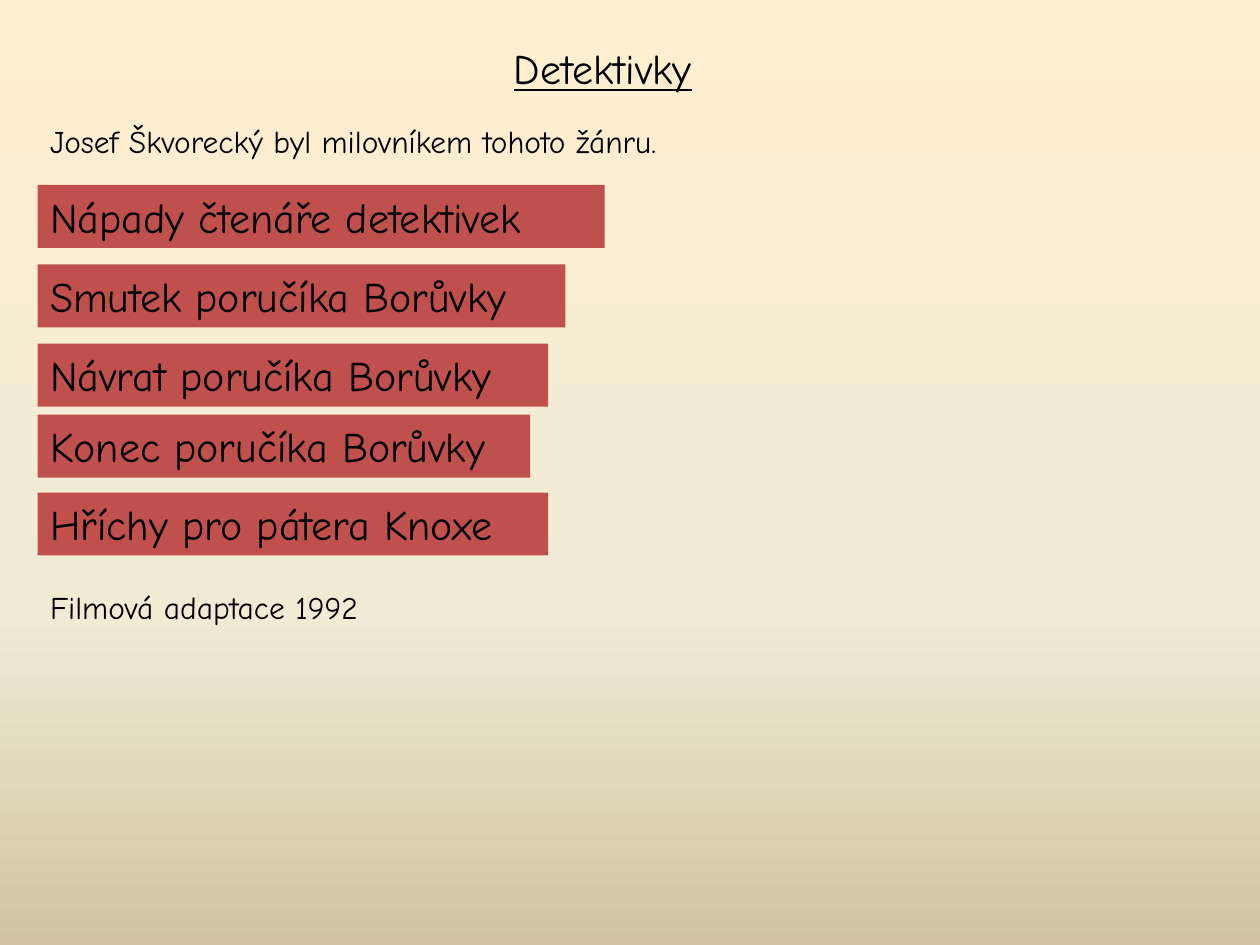
from copy import deepcopy
from dataclasses import dataclass

from pptx import Presentation
from pptx.dml.color import RGBColor
from pptx.enum.shapes import MSO_SHAPE
from pptx.enum.text import MSO_ANCHOR, PP_ALIGN
from pptx.oxml.ns import qn
from pptx.util import Cm, Pt

RECTANGLE = MSO_SHAPE.RECTANGLE
TOP = MSO_ANCHOR.TOP
LEFT = PP_ALIGN.LEFT


@dataclass(frozen=True)
class Theme:
    font: str = "Comic Neue"
    heading_size: int = 24
    note_size: int = 18
    ink: str = "000000"
    bar: str = "C0504D"
    # Background stops from top to bottom
    sky: tuple = ((0, "FFEFD1"), (0.65, "F0EBD5"), (1, "D1C39F"))


class SlideBuilder:
    def __init__(self, slide, theme):
        self.slide = slide
        self.theme = theme

    def background(self):
        fill = self.slide.background.fill
        fill.gradient()
        fill.gradient_angle = 270
        stop_list = self.slide.element.find(".//" + qn("a:gsLst"))
        stop_list.append(deepcopy(stop_list[0]))
        for stop, (position, color) in zip(fill.gradient_stops, self.theme.sky):
            stop.position = position
            stop.color.rgb = RGBColor.from_string(color)

    def set_text(self, shape, text, size, underline=False):
        frame = shape.text_frame
        for name, value in {"word_wrap": True, "vertical_anchor": TOP}.items():
            setattr(frame, name, value)
        paragraph = frame.paragraphs[0]
        paragraph.alignment = LEFT
        run = paragraph.add_run()
        run.text = text
        font_format = {
            "name": self.theme.font,
            "size": Pt(size),
            "underline": underline,
        }
        for name, value in font_format.items():
            setattr(run.font, name, value)
        run.font.color.rgb = RGBColor.from_string(self.theme.ink)

    def label(self, text, left, top, width, height, size, underline=False):
        box = self.slide.shapes.add_textbox(
            Cm(left), Cm(top), Cm(width), Cm(height))
        self.set_text(box, text, size, underline)

    def bar(self, text, left, top, width, height):
        bar = self.slide.shapes.add_shape(
            RECTANGLE, Cm(left), Cm(top), Cm(width), Cm(height))
        bar.shadow.inherit = False
        bar.fill.solid()
        bar.fill.fore_color.rgb = RGBColor.from_string(self.theme.bar)
        bar.line.fill.background()
        self.set_text(bar, text, self.theme.heading_size)


MARGIN = 0.76
BAR_HEIGHT = 1.27
NOTE_HEIGHT = 1.02

# Book title, top and width in cm
BOOKS = (
    ("Nápady čtenáře detektivek", 3.73, 11.43),
    ("Smutek poručíka Borůvky", 5.33, 10.64),
    ("Návrat poručíka Borůvky", 6.93, 10.29),
    ("Konec poručíka Borůvky", 8.36, 9.93),
    ("Hříchy pro pátera Knoxe", 9.93, 10.29),
)

# Remark, top and width in cm
NOTES = (
    ("Josef Škvorecký byl milovníkem tohoto žánru.", 2.34, 14.27),
    ("Filmová adaptace 1992", 11.73, 7.26),
)


def main():
    presentation = Presentation()
    presentation.slide_width = Cm(25.4)
    presentation.slide_height = Cm(19.05)
    theme = Theme()
    builder = SlideBuilder(
        presentation.slides.add_slide(presentation.slide_layouts[6]), theme)
    builder.background()

    # Heading
    builder.label("Detektivky", 10.11, 0.74, 4.9, BAR_HEIGHT,
                  theme.heading_size, underline=True)

    # Opening and closing remarks
    for remark, top, width in NOTES:
        builder.label(remark, MARGIN, top, width, NOTE_HEIGHT, theme.note_size)

    # Detective books
    for book, top, width in BOOKS:
        builder.bar(book, MARGIN, top, width, BAR_HEIGHT)

    presentation.save("out.pptx")


if __name__ == "__main__":
    main()
